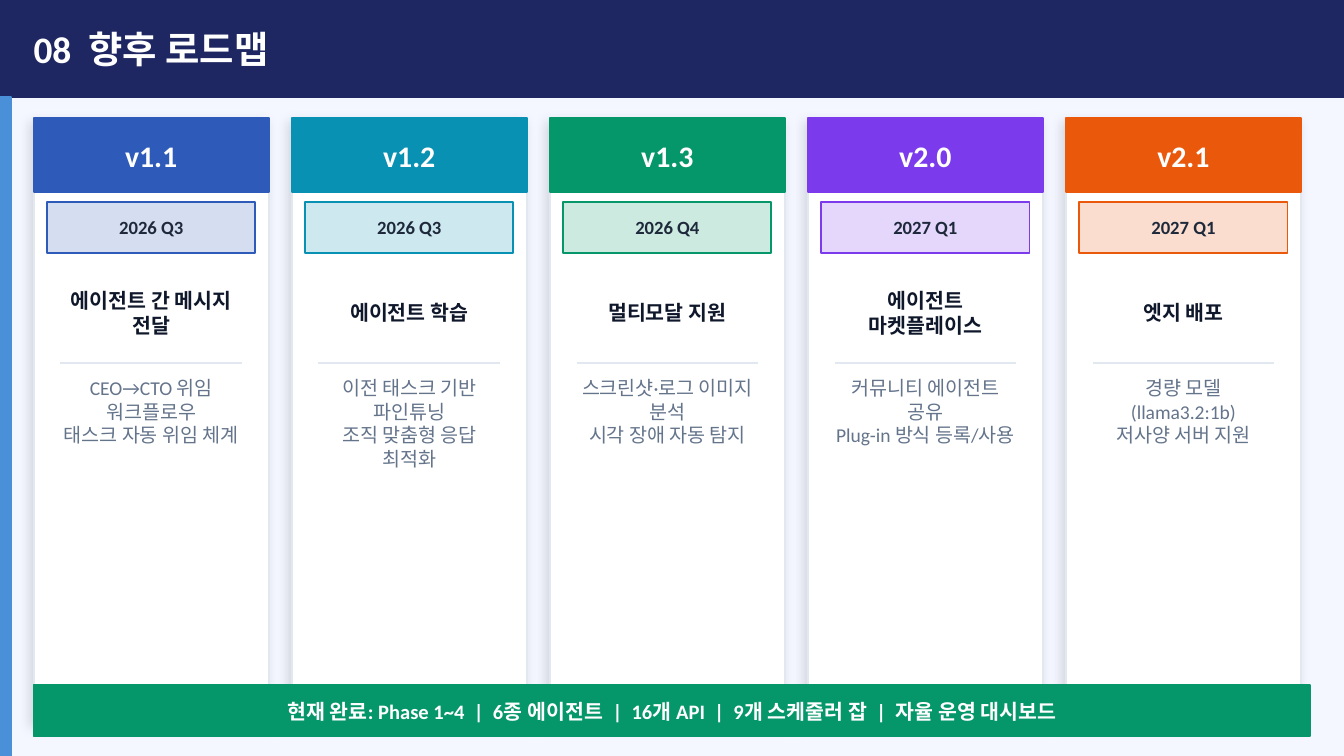
from dataclasses import dataclass

from lxml.etree import SubElement
from pptx import Presentation
from pptx.dml.color import RGBColor
from pptx.enum.shapes import MSO_CONNECTOR, MSO_SHAPE
from pptx.enum.text import MSO_ANCHOR, PP_ALIGN
from pptx.oxml.ns import qn
from pptx.util import Inches, Pt

COLORS = {
    "background": "F4F7FF", "navy": "1E2761", "sky": "4A90D9",
    "white": "FFFFFF", "border": "E2E8F0", "shadow": "000000",
    "date": "1E293B", "heading": "0F172A", "body": "64748B",
    "blue": "2E5BBA", "cyan": "0891B2", "green": "059669",
    "violet": "7C3AED", "orange": "EA580C",
}
FONT = "Calibri"
SLIDE_WIDTH = 10
SLIDE_HEIGHT = SLIDE_WIDTH * 9 / 16
MARGIN = 0.25
CONTENT_WIDTH = SLIDE_WIDTH - 2 * MARGIN
HEADER_HEIGHT = 0.72
CARD_WIDTH, CARD_GAP = 1.75, 0.17
CARD_TOP = 0.88
PADDING = 0.1


@dataclass(frozen=True)
class Box:
    left: float
    top: float
    width: float
    height: float

    def lengths(self) -> list:
        return [Inches(v) for v in (self.left, self.top, self.width, self.height)]


@dataclass(frozen=True)
class TextStyle:
    size: float
    color: str
    bold: bool = True
    align: PP_ALIGN = PP_ALIGN.CENTER
    anchor: MSO_ANCHOR = MSO_ANCHOR.MIDDLE
    inset: tuple[float, float] = (0, 0)


@dataclass(frozen=True)
class Milestone:
    version: str
    date: str
    color: str
    heading: str
    details: str


PADDED = (0.1, 0.05)
TITLE = TextStyle(20, "white", align=PP_ALIGN.LEFT)
VERSION = TextStyle(16, "white")
DATE = TextStyle(10, "date")
HEADING = TextStyle(11, "heading", inset=PADDED)
DETAILS = TextStyle(10.5, "body", bold=False, anchor=MSO_ANCHOR.TOP, inset=PADDED)
SUMMARY = TextStyle(11, "white", inset=PADDED)

MILESTONES = [
    Milestone("v1.1", "2026 Q3", "blue", "에이전트 간 메시지 전달",
              "CEO→CTO 위임 워크플로우\n태스크 자동 위임 체계"),
    Milestone("v1.2", "2026 Q3", "cyan", "에이전트 학습",
              "이전 태스크 기반 파인튜닝\n조직 맞춤형 응답 최적화"),
    Milestone("v1.3", "2026 Q4", "green", "멀티모달 지원",
              "스크린샷·로그 이미지 분석\n시각 장애 자동 탐지"),
    Milestone("v2.0", "2027 Q1", "violet", "에이전트 마켓플레이스",
              "커뮤니티 에이전트 공유\nPlug-in 방식 등록/사용"),
    Milestone("v2.1", "2027 Q1", "orange", "엣지 배포",
              "경량 모델 (llama3.2:1b)\n저사양 서버 지원"),
]


def rgb(name: str) -> RGBColor:
    return RGBColor.from_string(COLORS[name])


def add_text(slide, box: Box, text: str, style: TextStyle) -> None:
    frame = slide.shapes.add_textbox(*box.lengths()).text_frame
    frame.text = text
    frame.word_wrap = True
    frame.vertical_anchor = style.anchor
    frame.margin_left = frame.margin_right = Inches(style.inset[0])
    frame.margin_top = frame.margin_bottom = Inches(style.inset[1])
    for paragraph in frame.paragraphs:
        paragraph.alignment = style.align
        for run in paragraph.runs:
            run.font.name = FONT
            run.font.size = Pt(style.size)
            run.font.bold = style.bold
            run.font.color.rgb = rgb(style.color)


def add_rectangle(slide, box: Box, fill: str, line: str = ""):
    shape = slide.shapes.add_shape(MSO_SHAPE.RECTANGLE, *box.lengths())
    shape.shadow.inherit = False
    shape.fill.solid()
    shape.fill.fore_color.rgb = rgb(fill)
    shape.line.color.rgb = rgb(line or fill)
    shape.line.width = Pt(1)
    return shape


def set_alpha(color_element, percent: int) -> None:
    SubElement(color_element, qn("a:alpha"), val=str(percent * 1000))


def add_soft_shadow(shape) -> None:
    effects = shape._element.spPr.find(qn("a:effectLst"))
    shadow = SubElement(effects, qn("a:outerShdw"), blurRad=str(Pt(6)),
                        dist=str(Pt(3)), dir=str(135 * 60000),
                        algn="bl", rotWithShape="0")
    color = SubElement(shadow, qn("a:srgbClr"), val=COLORS["shadow"])
    set_alpha(color, 12)


def add_divider(slide, left: float, right: float, top: float) -> None:
    line = slide.shapes.add_connector(
        MSO_CONNECTOR.STRAIGHT, Inches(left), Inches(top), Inches(right), Inches(top))
    line.line.color.rgb = rgb("border")
    line.line.width = Pt(1)
    SubElement(line._element.spPr, qn("a:effectLst"))


def add_card(slide, column: int, milestone: Milestone) -> None:
    left = MARGIN + column * (CARD_WIDTH + CARD_GAP)
    inner_left = left + PADDING
    inner_width = CARD_WIDTH - 2 * PADDING
    banner_box = Box(left, CARD_TOP, CARD_WIDTH, 0.55)
    badge_box = Box(inner_left, 1.5, inner_width, 0.38)

    card = add_rectangle(slide, Box(left, CARD_TOP, CARD_WIDTH, 4.5), "white", "border")
    add_soft_shadow(card)
    add_rectangle(slide, banner_box, milestone.color)
    add_text(slide, banner_box, milestone.version, VERSION)

    badge = add_rectangle(slide, badge_box, milestone.color)
    fill_color = badge._element.spPr.find(qn("a:solidFill")).find(qn("a:srgbClr"))
    set_alpha(fill_color, 20)
    add_text(slide, badge_box, milestone.date, DATE)

    add_text(slide, Box(inner_left, 2, inner_width, 0.65), milestone.heading, HEADING)
    add_divider(slide, inner_left + PADDING, inner_left + inner_width - PADDING, 2.7)
    add_text(slide, Box(inner_left, 2.75, inner_width, 1.55), milestone.details, DETAILS)


def main() -> None:
    presentation = Presentation()
    presentation.slide_width = Inches(SLIDE_WIDTH)
    presentation.slide_height = Inches(SLIDE_HEIGHT)
    slide = presentation.slides.add_slide(presentation.slide_layouts[6])
    slide.background.fill.solid()
    slide.background.fill.fore_color.rgb = rgb("background")

    add_rectangle(slide, Box(0, 0, SLIDE_WIDTH, HEADER_HEIGHT), "navy")
    add_rectangle(slide, Box(0, HEADER_HEIGHT, 0.08, SLIDE_HEIGHT - HEADER_HEIGHT), "sky")
    add_text(slide, Box(MARGIN, 0, CONTENT_WIDTH, HEADER_HEIGHT), "08  향후 로드맵", TITLE)

    for column, milestone in enumerate(MILESTONES):
        add_card(slide, column, milestone)

    add_rectangle(slide, Box(MARGIN, 5.1, CONTENT_WIDTH, 0.38), "green")
    add_text(slide, Box(MARGIN + PADDING, 5.1, CONTENT_WIDTH - 2 * PADDING, 0.38),
             "현재 완료: Phase 1~4  |  6종 에이전트  |  16개 API  |  "
             "9개 스케줄러 잡  |  자율 운영 대시보드", SUMMARY)
    presentation.save("out.pptx")


if __name__ == "__main__":
    main()
